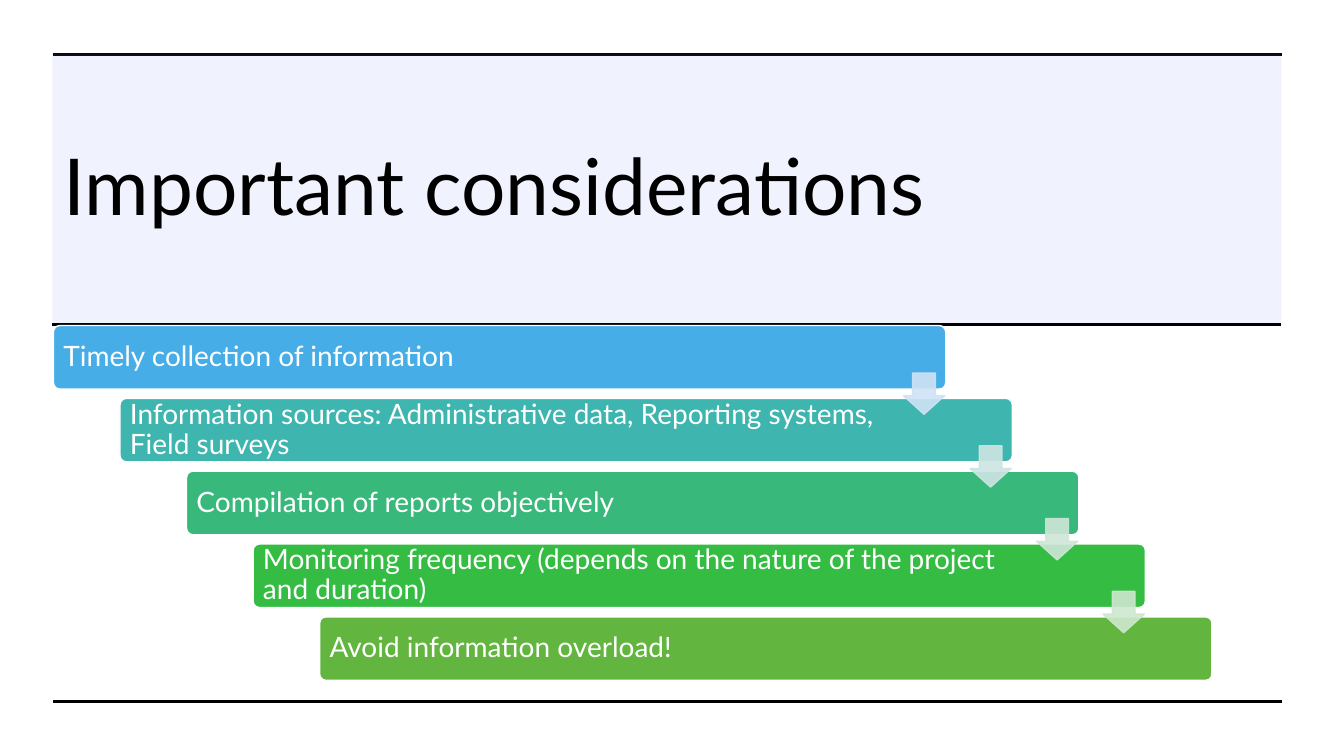
from lxml import etree
from pptx import Presentation
from pptx.dml.color import RGBColor
from pptx.enum.shapes import MSO_CONNECTOR, MSO_SHAPE
from pptx.enum.text import MSO_ANCHOR, PP_ALIGN
from pptx.oxml.ns import qn
from pptx.util import Inches, Pt

RECT = MSO_SHAPE.RECTANGLE
ROUND = MSO_SHAPE.ROUNDED_RECTANGLE
DOWN = MSO_SHAPE.DOWN_ARROW
STRAIGHT = MSO_CONNECTOR.STRAIGHT
MIDDLE = MSO_ANCHOR.MIDDLE
LEFT = PP_ALIGN.LEFT

TITLE = "Important considerations"
# text, bar colour, colour of the arrow to the next bar
STEPS = [
    ("Timely collection of information", "46ADE7", "CFE3F6"),
    ("Information sources: Administrative data, Reporting systems, Field surveys",
     "3EB5AE", "CEE5E3"),
    ("Compilation of reports objectively", "39B87C", "CEE6D7"),
    ("Monitoring frequency (depends on the nature of the project and duration)",
     "34BC43", "CEE7CF"),
    ("Avoid information overload!", "62B53E", None),
]
THEME = {
    "font": "Lato", "title": 56, "body": 20,
    "ink": "000000", "paper": "FFFFFF", "panel": "708CEC",
    "rule": 2.25, "edge": 1,
}

WIDE, HIGH = 13.33, 7.5
RULES = [(0.53, 0.54), (0.52, 3.22), (0.53, 6.96)]
RULE_W = 12.19
BAR_X, BAR_Y, BAR_W, BAR_H = 0.53, 3.23, 8.85, 0.63
STEP_X, STEP_Y = 0.66, 0.7225
ARROW = 0.41
ARROW_X, ARROW_Y = 8.96, 3.7


def fade(fill, alpha):
    """Make a solid fill show at alpha percent."""
    tint = etree.SubElement(fill.find(".//" + qn("a:srgbClr")), qn("a:alpha"))
    tint.set("val", str(alpha * 1000))


def add_box(slide, kind, box, color, edge=None, adjust=(), alpha=100):
    shape = slide.shapes.add_shape(kind, *map(Inches, box))
    shape.shadow.inherit = False
    for i, value in enumerate(adjust):
        shape.adjustments[i] = value
    shape.fill.solid()
    shape.fill.fore_color.rgb = RGBColor.from_string(color)
    if edge:
        shape.line.color.rgb = RGBColor.from_string(edge)
        shape.line.width = Pt(THEME["edge"])
    else:
        shape.line.fill.background()
    if alpha < 100:
        props = shape._element.spPr
        fade(props.find(qn("a:solidFill")), alpha)
        if edge:
            fade(props.find(qn("a:ln")), alpha)
    return shape


def add_rule(slide, x, y):
    rule = slide.shapes.add_connector(
        STRAIGHT, Inches(x), Inches(y), Inches(x + RULE_W), Inches(y))
    rule.line.color.rgb = RGBColor.from_string(THEME["ink"])
    rule.line.width = Pt(THEME["rule"])
    etree.SubElement(rule._element.spPr, qn("a:effectLst"))


def write(shape, text, size, color, left=0.1, right=0.1):
    frame = shape.text_frame
    frame.word_wrap = True
    frame.vertical_anchor = MIDDLE
    frame.margin_left, frame.margin_right = Inches(left), Inches(right)
    frame.margin_top = frame.margin_bottom = 0
    para = frame.paragraphs[0]
    para.alignment = LEFT
    para.line_spacing = 0.9
    run = para.add_run()
    run.text = text
    run.font.name = THEME["font"]
    run.font.size = Pt(size)
    run.font.color.rgb = RGBColor.from_string(color)


def main():
    deck = Presentation()
    deck.slide_width, deck.slide_height = Inches(WIDE), Inches(HIGH)
    slide = deck.slides.add_slide(deck.slide_layouts[6])

    add_box(slide, RECT, (0, 0, WIDE, HIGH), THEME["paper"])
    add_rule(slide, *RULES[0])
    add_box(slide, RECT, (0.52, 0.53, RULE_W, 2.69), THEME["panel"], alpha=10)
    title = slide.shapes.add_textbox(*map(Inches, (0.53, 1.07, 9.2, 1.63)))
    write(title, TITLE, THEME["title"], THEME["ink"])
    for x, y in RULES[1:]:
        add_rule(slide, x, y)

    for i, (text, color, _) in enumerate(STEPS):
        box = (BAR_X + i * STEP_X, BAR_Y + i * STEP_Y, BAR_W, BAR_H)
        bar = add_box(slide, ROUND, box, color, THEME["paper"], (0.1,))
        write(bar, text, THEME["body"], THEME["paper"], 0.08, 1.15)
    for i, (_, _, color) in enumerate(STEPS[:-1]):
        box = (ARROW_X + i * STEP_X, ARROW_Y + i * STEP_Y, ARROW, ARROW)
        # adjustments run shaft width, then head length
        add_box(slide, DOWN, box, color, color, (0.55, 0.45), 90)

    deck.save("out.pptx")


if __name__ == "__main__":
    main()
